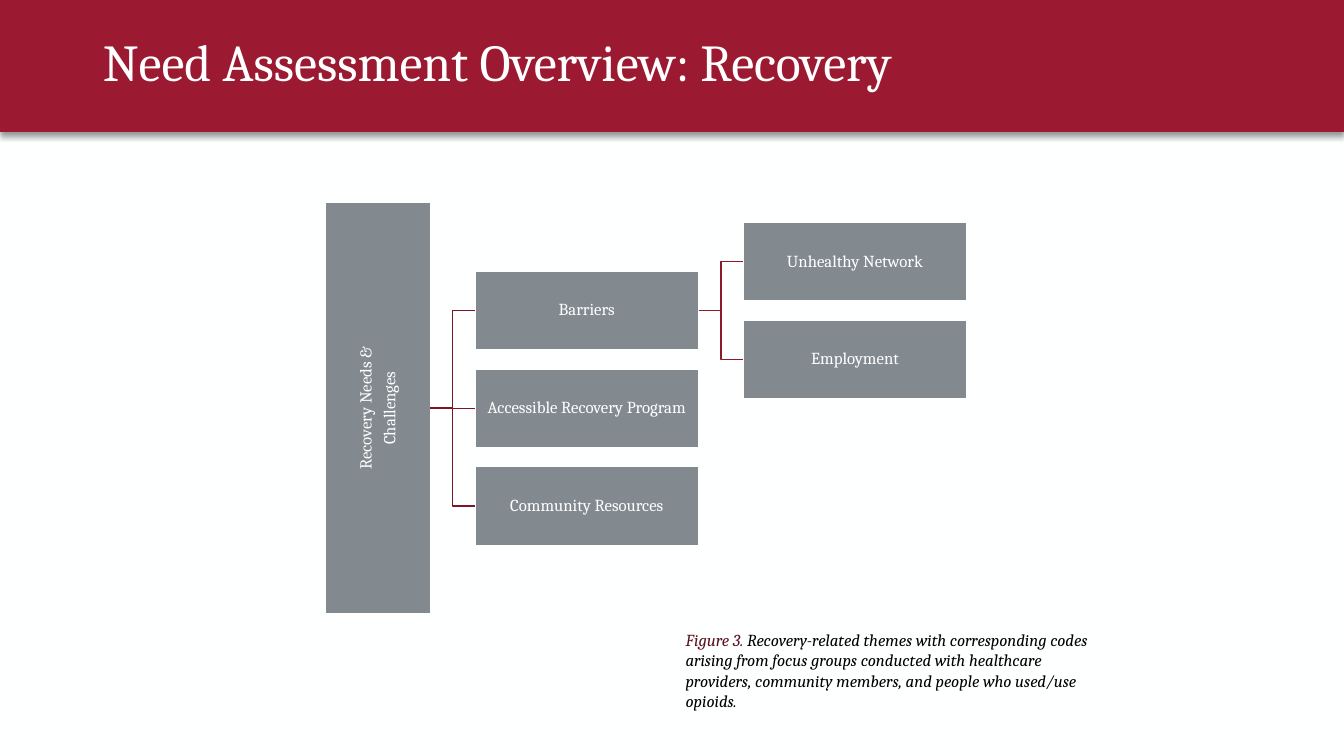
from dataclasses import dataclass

from lxml.etree import SubElement
from pptx import Presentation
from pptx.dml.color import RGBColor
from pptx.enum.shapes import MSO_CONNECTOR, MSO_SHAPE
from pptx.enum.text import MSO_ANCHOR, MSO_AUTO_SIZE, PP_ALIGN
from pptx.oxml import parse_xml
from pptx.oxml.ns import nsdecls, qn
from pptx.shapes.autoshape import Shape
from pptx.slide import Slide
from pptx.util import Inches, Pt

FONT = "Cambria"
PAPER = RGBColor(0xFE, 0xFF, 0xFF)
WHITE = RGBColor(0xFF, 0xFF, 0xFF)
BLACK = RGBColor(0x00, 0x00, 0x00)
CRIMSON = RGBColor(0x9C, 0x19, 0x32)
GREY = RGBColor(0x82, 0x8A, 0x8F)
ROOT_LINK = RGBColor(0x7D, 0x15, 0x28)
CODE_LINK = RGBColor(0x8F, 0x18, 0x2D)
CAPTION_LABEL = RGBColor(0x58, 0x10, 0x1C)

# Tree grid: themes and codes sit in columns, rows count from the root's centre
COLUMN_LEFT, COLUMN_STEP = 4.71, 2.66
ROW_CENTRE, ROW_STEP = 4.05, 0.97
BOX_WIDTH, BOX_HEIGHT = 2.22, 0.78
ROOT_LEFT, ROOT_WIDTH, ROOT_HEIGHT = 3.23, 1.04, 4.08
RIGHT_SIDE, LEFT_SIDE = 3, 1


@dataclass(frozen=True)
class Node:
    label: str
    parent: str
    column: int
    row: float
    link_color: RGBColor


ROOT_LINES = ["Recovery Needs &", "Challenges"]
ROOT = "root"
NODES = [
    Node("Barriers", ROOT, 0, -1, ROOT_LINK),
    Node("Accessible Recovery Program", ROOT, 0, 0, ROOT_LINK),
    Node("Community Resources", ROOT, 0, 1, ROOT_LINK),
    Node("Unhealthy Network", "Barriers", 1, -1.5, CODE_LINK),
    Node("Employment", "Barriers", 1, -0.5, CODE_LINK),
]


def add_box(slide: Slide, left: float, centre: float, width: float,
            height: float, lines: list[str]) -> Shape:
    """Add a grey box centred on a row, with one paragraph per line."""
    box = slide.shapes.add_shape(
        MSO_SHAPE.RECTANGLE, Inches(left), Inches(centre - height / 2),
        Inches(width), Inches(height))
    box.shadow.inherit = False
    box.fill.solid()
    box.fill.fore_color.rgb = GREY
    box.line.color.rgb = WHITE
    box.line.width = Pt(1)
    frame = box.text_frame
    frame.word_wrap = True
    frame.vertical_anchor = MSO_ANCHOR.MIDDLE
    frame.margin_left = frame.margin_right = Inches(0.01)
    frame.margin_top = frame.margin_bottom = Inches(0.01)
    frame.text = "\n".join(lines)
    for index, paragraph in enumerate(frame.paragraphs):
        paragraph.alignment = PP_ALIGN.CENTER
        paragraph.line_spacing = 0.9
        if index:
            paragraph.space_before = Pt(4)
        paragraph.font.name = FONT
        paragraph.font.size = Pt(12)
        paragraph.font.color.rgb = WHITE
    return box


def add_link(slide: Slide, parent: Shape, child: Shape, color: RGBColor,
             kind: MSO_CONNECTOR) -> None:
    """Join a parent's right side to a child's left side."""
    link = slide.shapes.add_connector(kind, 0, 0, 0, 0)
    link.begin_connect(parent, RIGHT_SIDE)
    link.end_connect(child, LEFT_SIDE)
    link.line.color.rgb = color
    link.line.width = Pt(1)
    SubElement(link._element.spPr, qn("a:effectLst"))


def add_header(slide: Slide) -> None:
    """Draw the shadowed band and set the title over it."""
    band = slide.shapes.add_shape(
        MSO_SHAPE.RECTANGLE, 0, 0, Inches(13.33), Inches(1.31))
    band.fill.solid()
    band.fill.fore_color.rgb = CRIMSON
    band.line.fill.background()
    band._element.spPr.append(parse_xml(
        f'<a:effectLst {nsdecls("a")}>'
        f'<a:outerShdw blurRad="{Pt(4)}" dist="{Pt(3)}" dir="5400000">'
        '<a:srgbClr val="000000"><a:alpha val="40000"/></a:srgbClr>'
        '</a:outerShdw></a:effectLst>'))

    title = slide.shapes.title
    title._element.addprevious(band._element)
    title.left, title.top = Inches(0.92), Inches(0.17)
    title.width, title.height = Inches(11.5), Inches(0.94)
    frame = title.text_frame
    frame.text = "Need Assessment Overview: Recovery"
    frame.auto_size = MSO_AUTO_SIZE.NONE
    frame.vertical_anchor = MSO_ANCHOR.MIDDLE
    paragraph = frame.paragraphs[0]
    paragraph.alignment = PP_ALIGN.LEFT
    paragraph.line_spacing = 0.9
    paragraph.font.name = FONT
    paragraph.font.size = Pt(37)
    paragraph.font.color.rgb = PAPER


def add_tree(slide: Slide) -> None:
    """Draw the root, its themes and codes, and the links between them."""
    root = add_box(slide, ROOT_LEFT, ROW_CENTRE, ROOT_WIDTH, ROOT_HEIGHT,
                   ROOT_LINES)
    root.text_frame._txBody.bodyPr.set("vert", "vert270")
    boxes = {ROOT: root}
    for node in NODES:
        boxes[node.label] = add_box(
            slide, COLUMN_LEFT + node.column * COLUMN_STEP,
            ROW_CENTRE + node.row * ROW_STEP, BOX_WIDTH, BOX_HEIGHT,
            [node.label])
        kind = MSO_CONNECTOR.ELBOW if node.row else MSO_CONNECTOR.STRAIGHT
        add_link(slide, boxes[node.parent], boxes[node.label],
                 node.link_color, kind)


def add_caption(slide: Slide) -> None:
    """Write the figure caption with its coloured label."""
    caption = slide.shapes.add_textbox(
        Inches(6.8), Inches(6.25), Inches(4.13), Inches(0.81))
    frame = caption.text_frame
    frame.word_wrap = True
    frame.margin_left = frame.margin_right = 0
    frame.margin_top = frame.margin_bottom = 0
    paragraph = frame.paragraphs[0]
    paragraph.font.name = FONT
    paragraph.font.size = Pt(12)
    paragraph.font.italic = True
    for text, color in [
        ("Figure 3. ", CAPTION_LABEL),
        ("Recovery-related themes with corresponding codes arising from "
         "focus groups conducted with healthcare providers, community "
         "members, and people who used/use opioids.", BLACK),
    ]:
        run = paragraph.add_run()
        run.text = text
        run.font.color.rgb = color


def main() -> None:
    presentation = Presentation()
    presentation.slide_width = Inches(13.33)
    presentation.slide_height = Inches(7.5)
    slide = presentation.slides.add_slide(presentation.slide_layouts[5])
    slide.background.fill.solid()
    slide.background.fill.fore_color.rgb = PAPER
    add_header(slide)
    add_tree(slide)
    add_caption(slide)
    presentation.save("out.pptx")


if __name__ == "__main__":
    main()
